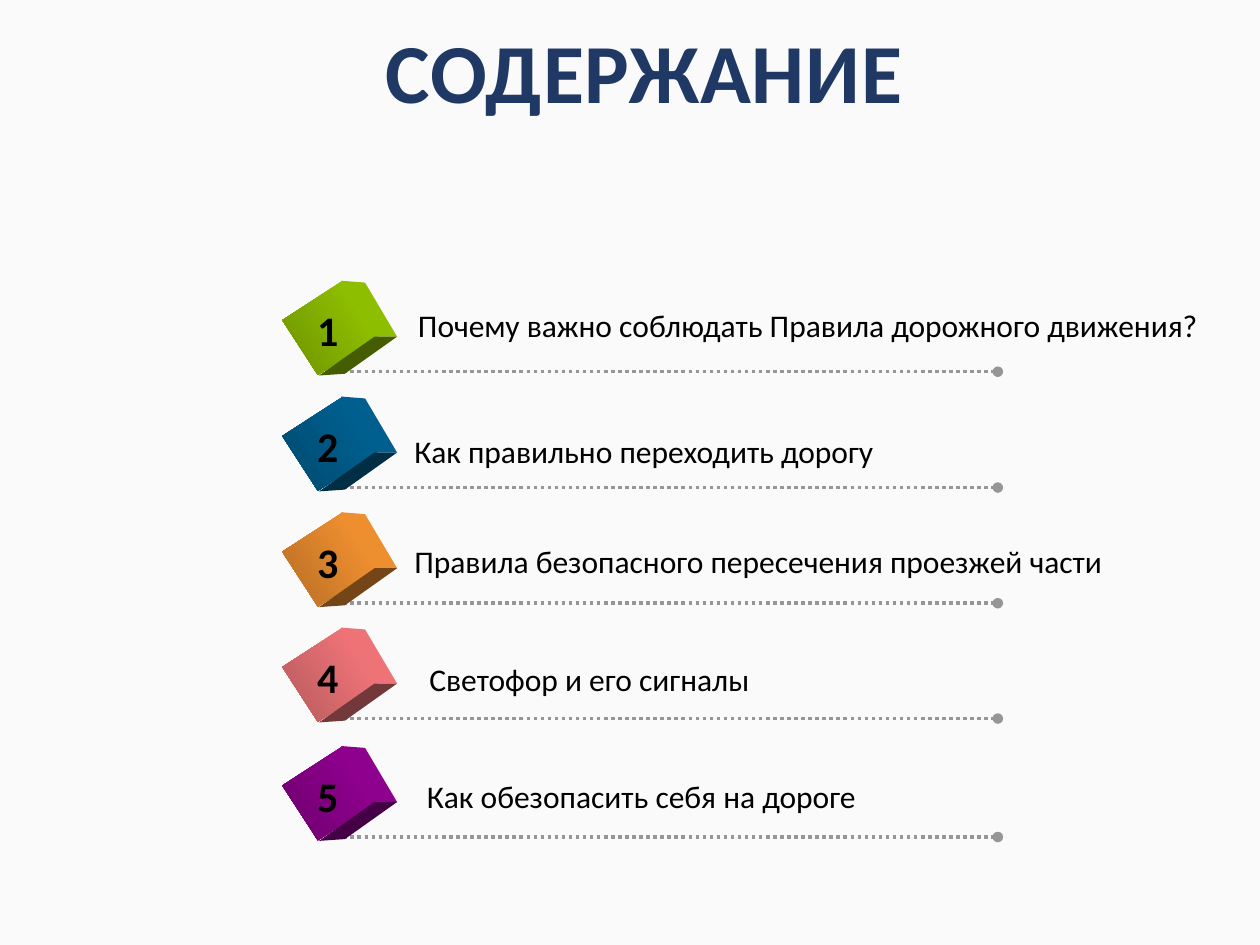
from lxml import etree
from pptx import Presentation
from pptx.dml.color import RGBColor
from pptx.enum.dml import MSO_LINE
from pptx.enum.shapes import MSO_CONNECTOR, MSO_SHAPE
from pptx.enum.text import MSO_ANCHOR, PP_ALIGN
from pptx.oxml.ns import qn
from pptx.util import Pt

STRAIGHT = MSO_CONNECTOR.STRAIGHT
RECTANGLE = MSO_SHAPE.RECTANGLE
DOTTED = MSO_LINE.ROUND_DOT
LEFT, CENTER = PP_ALIGN.LEFT, PP_ALIGN.CENTER
TOP, MIDDLE = MSO_ANCHOR.TOP, MSO_ANCHOR.MIDDLE

TOPICS = [
    ("Почему важно соблюдать Правила дорожного движения?", 212.4, 231.8, 171.4, 465, "99CC00", "6D9200"),
    ("Как правильно переходить дорогу", 278.6, 229.7, 243.4, 280, "006699", "00496D"),
    ("Правила безопасного пересечения проезжей части", 344.7, 229.7, 306, 435, "FF9933", "B66D24"),
    ("Светофор и его сигналы", 410.6, 238.3, 373.7, 200, "FF7C80", "B6595C"),
    ("Как обезопасить себя на дороге", 478.3, 236.9, 440.6, 263, "990099", "6D006D"),
]
RIGHT_FACE = [(194.9, -52), (208.6, -50.9), (226.9, -20), (214, -20)]
BOTTOM_FACE = [(182.3, 2.2), (214, -20), (226.9, -20), (197.1, 1.2)]


def color(value, shade=1):
    """Turn a hex string into a colour, darkened by the shade factor."""
    return RGBColor(*(round(part * shade) for part in bytes.fromhex(value)))


def write(box, text, size=18, ink="000000", bold=False, align=LEFT, anchor=TOP,
          line_spacing=None, tracking=None):
    """Put one formatted paragraph into a text box."""
    frame = box.text_frame
    frame.word_wrap = True
    frame.vertical_anchor = anchor
    para = frame.paragraphs[0]
    para.alignment = align
    para.line_spacing = line_spacing
    span = para.add_run()
    span.text = text
    span.font.name = "Calibri"
    span.font.size = Pt(size)
    span.font.bold = bold
    span.font.color.rgb = color(ink)
    if tracking:
        span.font._element.set("spc", str(round(tracking * 100)))


class Page:
    """Hold the slide, its style and the shapes being added to."""

    line_color = "969696"
    line_width = 2

    def __init__(self, deck, background):
        """Add a blank slide with a plain background."""
        self.slide = deck.slides.add_slide(deck.slide_layouts[6])
        self.slide.background.fill.solid()
        self.slide.background.fill.fore_color.rgb = color(background)
        self.shapes = self.slide.shapes

    def group(self):
        """Send the elements that follow into a new group."""
        self.shapes = self.slide.shapes.add_group_shape().shapes

    def text(self, text, left, top, width, height, **style):
        """Add a text box."""
        box = self.shapes.add_textbox(Pt(left), Pt(top), Pt(width), Pt(height))
        write(box, text, **style)

    def rule(self, left, right, height):
        """Add a dotted horizontal line that ends in a dot."""
        rule = self.shapes.add_connector(STRAIGHT, Pt(left), Pt(height), Pt(right), Pt(height))
        rule.line.color.rgb = color(self.line_color)
        rule.line.width = Pt(self.line_width)
        rule.line.dash_style = DOTTED
        properties = rule._element.spPr
        etree.SubElement(properties.find(qn("a:ln")), qn("a:tailEnd"), type="oval")
        etree.SubElement(properties, qn("a:effectLst"))

    def face(self, corners, base, fill, shade):
        """Add one flat side of a cube."""
        points = [(Pt(x), Pt(base + y)) for x, y in corners]
        builder = self.shapes.build_freeform(*points[0])
        builder.add_line_segments(points[1:], close=True)
        side = builder.convert_to_shape()
        side.shadow.inherit = False
        side.fill.solid()
        side.fill.fore_color.rgb = color(fill, shade)
        side.line.fill.background()

    def cube(self, base, light, dark):
        """Add a tilted cube with a gradient front."""
        front = self.shapes.add_shape(RECTANGLE, Pt(169.9), Pt(base - 45.4), Pt(37.4), Pt(41))
        front.rotation = 57
        front.shadow.inherit = False
        front.line.fill.background()
        front.fill.gradient()
        front.fill.gradient_angle = 270
        for stop, position, fill in zip(front.fill.gradient_stops, (0, 1), (light, dark)):
            stop.position = position
            stop.color.rgb = color(fill)
        self.face(RIGHT_FACE, base, light, 0.93)
        self.face(BOTTOM_FACE, base, light, 0.45)


def main():
    """Build the contents slide."""
    deck = Presentation()
    deck.slide_width, deck.slide_height = Pt(720), Pt(540)
    page = Page(deck, "FAFAFA")
    page.text("СОДЕРЖАНИЕ", 175, 12.2, 386, 62.6, size=48, ink="203864", bold=True,
              align=CENTER, anchor=MIDDLE, line_spacing=0.9, tracking=0.5)
    for number, (topic, base, left, top, width, light, dark) in enumerate(TOPICS, 1):
        page.group()
        page.rule(192.2, 570.2, base)
        page.cube(base, light, dark)
        page.text(topic, left, top, width, 28.8)
        page.text(str(number), 174.2, base - 41.8, 26.6, 36.7, size=24, bold=True)
    deck.save("out.pptx")


if __name__ == "__main__":
    main()
